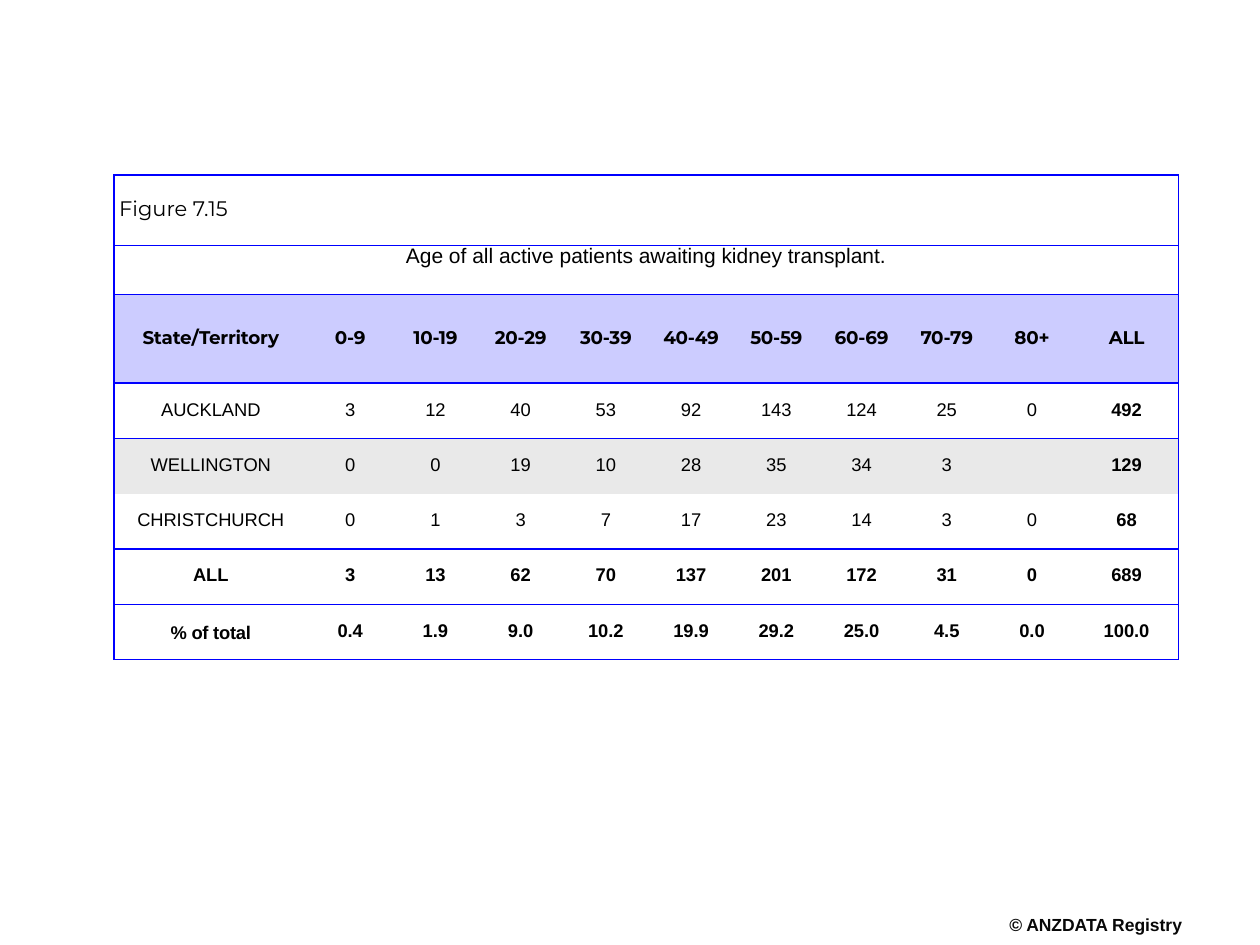
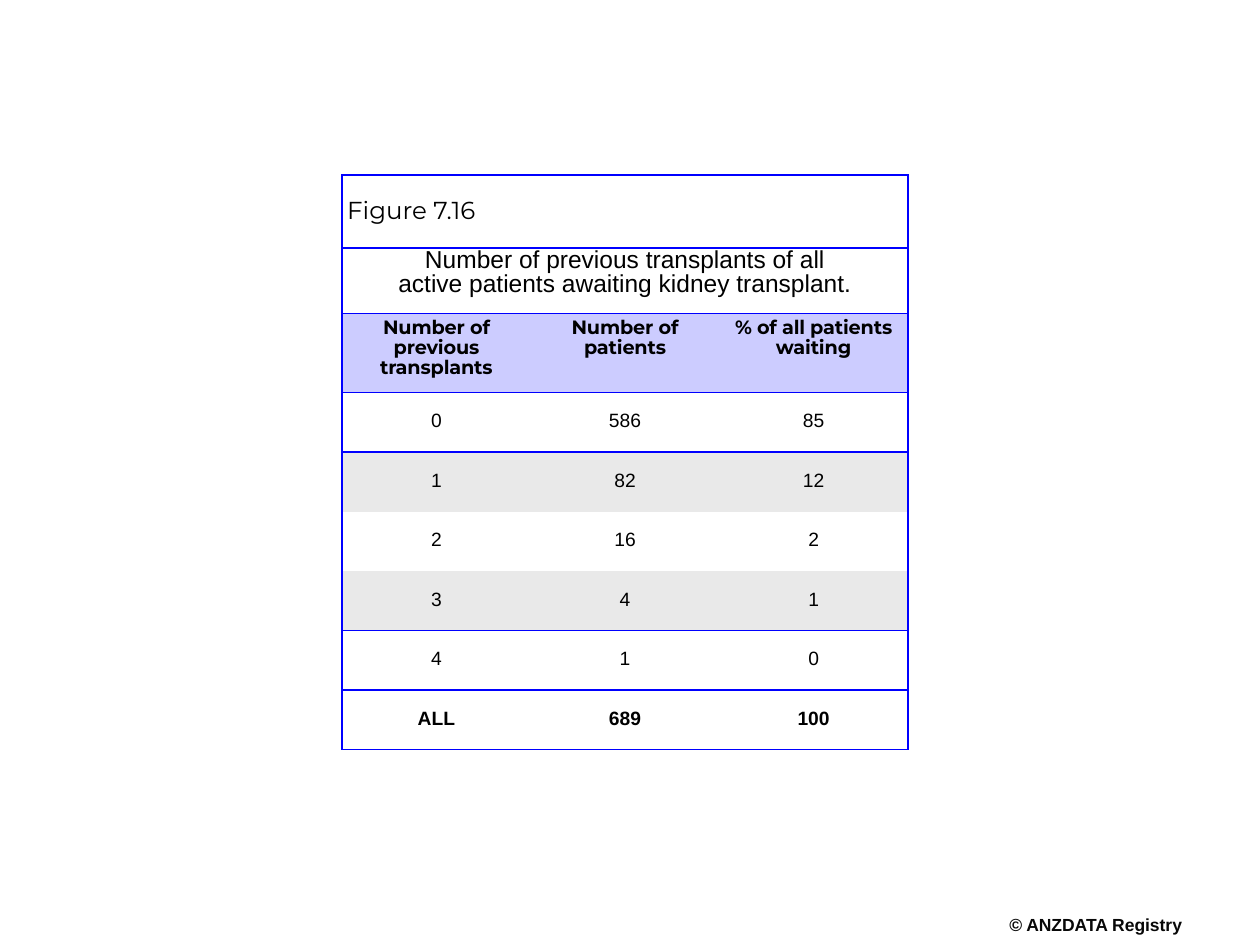
from dataclasses import dataclass

from lxml import etree
from pptx import Presentation
from pptx import util as u
from pptx.dml.color import RGBColor
from pptx.enum import text
from pptx.oxml import ns

BLUE, LAVENDER, GREY, WHITE = "0000FF", "CCCCFF", "E9E9E9", "FFFFFF"
BLACK, FOOTER_COLOUR = "000000", "080808"
BODY_FONT, HEADING_FONT = "Arial", "Montserrat"
LINE_SPACING = 0.85
NO_STYLE = "{2D5ABB26-0587-4C30-8999-92F81FD0307C}"
CAPTION_ROW, TITLE_ROW, HEADER_ROW = range(3)
TOP, MIDDLE = text.MSO_ANCHOR.TOP, text.MSO_ANCHOR.MIDDLE
LEFT, CENTER = text.PP_ALIGN.LEFT, text.PP_ALIGN.CENTER


@dataclass
class TextStyle:
    size: float
    font: str = BODY_FONT
    bold: bool = False
    colour: str = BLACK
    align: text.PP_ALIGN = CENTER
    line_spacing: float = LINE_SPACING
    tracking: float = 0


@dataclass
class FigureTable:
    caption: str
    title: str
    header: list[str]
    body: list[list[str]]
    left: float
    top: float
    column_widths: list[float]
    row_heights: list[float]
    title_size: float
    body_size: float
    header_anchor: text.MSO_ANCHOR
    ruled_below: set[int]
    total_rows: int = 1
    bold_last_column: bool = False


def colour(value: str) -> RGBColor:
    return RGBColor.from_string(value)


def set_attributes(target, values: dict) -> None:
    for name, value in values.items():
        setattr(target, name, value)


def write(frame, content: str, style: TextStyle) -> None:
    paragraph = frame.paragraphs[0]
    paragraph.text = content
    set_attributes(paragraph, {"alignment": style.align,
                               "line_spacing": style.line_spacing})
    for run in paragraph.runs:
        set_attributes(run.font, {"name": style.font, "size": u.Pt(style.size),
                                  "bold": style.bold})
        run.font.color.rgb = colour(style.colour)
        if style.tracking:
            run.font._element.set("spc", str(round(style.tracking * 100)))


def set_borders(cell, sides: str) -> None:
    """Rule the given sides (L, R, T, B) of a cell in blue."""
    properties = cell._tc.get_or_add_tcPr()
    for side in sides:
        line = etree.SubElement(properties, ns.qn(f"a:ln{side}"), w=str(u.Pt(1)))
        fill = etree.SubElement(line, ns.qn("a:solidFill"))
        etree.SubElement(fill, ns.qn("a:srgbClr"), val=BLUE)


def set_fill(cell, value: str | None) -> None:
    if value is None:
        cell.fill.background()
    else:
        cell.fill.solid()
        cell.fill.fore_color.rgb = colour(value)


def set_margins(cell, horizontal: float, vertical: float) -> None:
    set_attributes(cell, {
        "margin_left": u.Pt(horizontal), "margin_right": u.Pt(horizontal),
        "margin_top": u.Pt(vertical), "margin_bottom": u.Pt(vertical)})


def cell_style(figure: FigureTable, row: int, column: int, content: str) -> TextStyle:
    if row == CAPTION_ROW:
        return TextStyle(figure.title_size, HEADING_FONT, align=LEFT)
    if row == TITLE_ROW:
        return TextStyle(figure.title_size)
    if row == HEADER_ROW:
        return TextStyle(figure.body_size, HEADING_FONT, True, tracking=-0.1)
    total = row >= len(figure.row_heights) - figure.total_rows
    last = column == len(figure.header) - 1
    style = TextStyle(figure.body_size, bold=total or (last and figure.bold_last_column))
    if content == "% of total":
        set_attributes(style, {"line_spacing": 1.14, "tracking": -0.1})
    return style


def row_fill(figure: FigureTable, row: int) -> str | None:
    if row < HEADER_ROW:
        return WHITE
    if row == HEADER_ROW:
        return LAVENDER
    total = row >= len(figure.row_heights) - figure.total_rows
    return GREY if row % 2 == 0 and not total else None


def draw_table(slide, figure: FigureTable) -> None:
    column_count, row_count = len(figure.header), len(figure.row_heights)
    shape = slide.shapes.add_table(
        row_count, column_count, u.Pt(figure.left), u.Pt(figure.top),
        u.Pt(sum(figure.column_widths)), u.Pt(sum(figure.row_heights)))
    table = shape.table
    set_attributes(table, {"first_row": False, "horz_banding": False})
    table._tbl.tblPr.find(ns.qn("a:tableStyleId")).text = NO_STYLE
    for column, width in zip(table.columns, figure.column_widths):
        column.width = u.Pt(width)
    for row, height in zip(table.rows, figure.row_heights):
        row.height = u.Pt(height)

    # Caption and title run across the whole table
    for row in (CAPTION_ROW, TITLE_ROW):
        table.cell(row, 0).merge(table.cell(row, column_count - 1))

    contents = [[figure.caption], [figure.title], figure.header, *figure.body]
    for row in range(row_count):
        for column in range(column_count):
            cell = table.cell(row, column)
            sides = {
                "L": column == 0,
                "R": column == column_count - 1 or cell.is_merge_origin,
                "T": row == 0 or row - 1 in figure.ruled_below,
                "B": row in figure.ruled_below}
            set_borders(cell, "".join(side for side, ruled in sides.items() if ruled))
            set_fill(cell, row_fill(figure, row))
            if row == TITLE_ROW:
                set_margins(cell, 28, 1.4)
                cell.vertical_anchor = TOP
            else:
                set_margins(cell, 2.9, 2.9)
                cell.vertical_anchor = figure.header_anchor if row == HEADER_ROW else MIDDLE
            if not cell.is_spanned and contents[row][column]:
                content = contents[row][column]
                write(cell.text_frame, content, cell_style(figure, row, column, content))


def draw_footer(slide) -> None:
    box = slide.shapes.add_textbox(u.Pt(575.3), u.Pt(524.2), u.Pt(101.5), u.Pt(12.2))
    frame = box.text_frame
    set_attributes(frame, {
        "margin_left": 0, "margin_right": 0, "margin_top": 0, "margin_bottom": 0,
        "word_wrap": False, "auto_size": text.MSO_AUTO_SIZE.SHAPE_TO_FIT_TEXT})
    write(frame, "© ANZDATA Registry", TextStyle(10, bold=True, colour=FOOTER_COLOUR))


FIGURES = [
    FigureTable(
        caption="Figure 7.15",
        title="Age of all active patients awaiting kidney transplant.",
        header=["State/Territory", "0-9", "10-19", "20-29", "30-39", "40-49",
                "50-59", "60-69", "70-79", "80+", "ALL"],
        body=[
            ["AUCKLAND", "3", "12", "40", "53", "92", "143", "124", "25", "0", "492"],
            ["WELLINGTON", "0", "0", "19", "10", "28", "35", "34", "3", "", "129"],
            ["CHRISTCHURCH", "0", "1", "3", "7", "17", "23", "14", "3", "0", "68"],
            ["ALL", "3", "13", "62", "70", "137", "201", "172", "31", "0", "689"],
            ["% of total", "0.4", "1.9", "9.0", "10.2", "19.9", "29.2", "25.0",
             "4.5", "0.0", "100.0"],
        ],
        left=65.2, top=100,
        column_widths=[110.6] + [48.7] * 9 + [59.4],
        row_heights=[40.2, 28, 50.8] + [31.6] * 5,
        title_size=12, body_size=10.5, header_anchor=MIDDLE,
        ruled_below={0, 1, 2, 5, 7}, total_rows=2, bold_last_column=True),
    FigureTable(
        caption="Figure 7.16",
        title="Number of previous transplants of all active patients "
              "awaiting kidney transplant.",
        header=["Number of previous transplants", "Number of\vpatients",
                "% of all patients waiting"],
        body=[
            ["0", "586", "85"],
            ["1", "82", "12"],
            ["2", "16", "2"],
            ["3", "4", "1"],
            ["4", "1", "0"],
            ["ALL", "689", "100"],
        ],
        left=195.5, top=100,
        column_widths=[107.8] * 3,
        row_heights=[41.6, 37.6, 45.2] + [34] * 6,
        title_size=14, body_size=11, header_anchor=TOP,
        ruled_below={0, 1, 2, 6, 7, 8}),
]


def main() -> None:
    presentation = Presentation()
    set_attributes(presentation, {"slide_width": u.Pt(720), "slide_height": u.Pt(540)})
    for figure in FIGURES:
        slide = presentation.slides.add_slide(presentation.slide_layouts[6])
        draw_footer(slide)
        draw_table(slide, figure)
    presentation.save("out.pptx")


if __name__ == "__main__":
    main()
